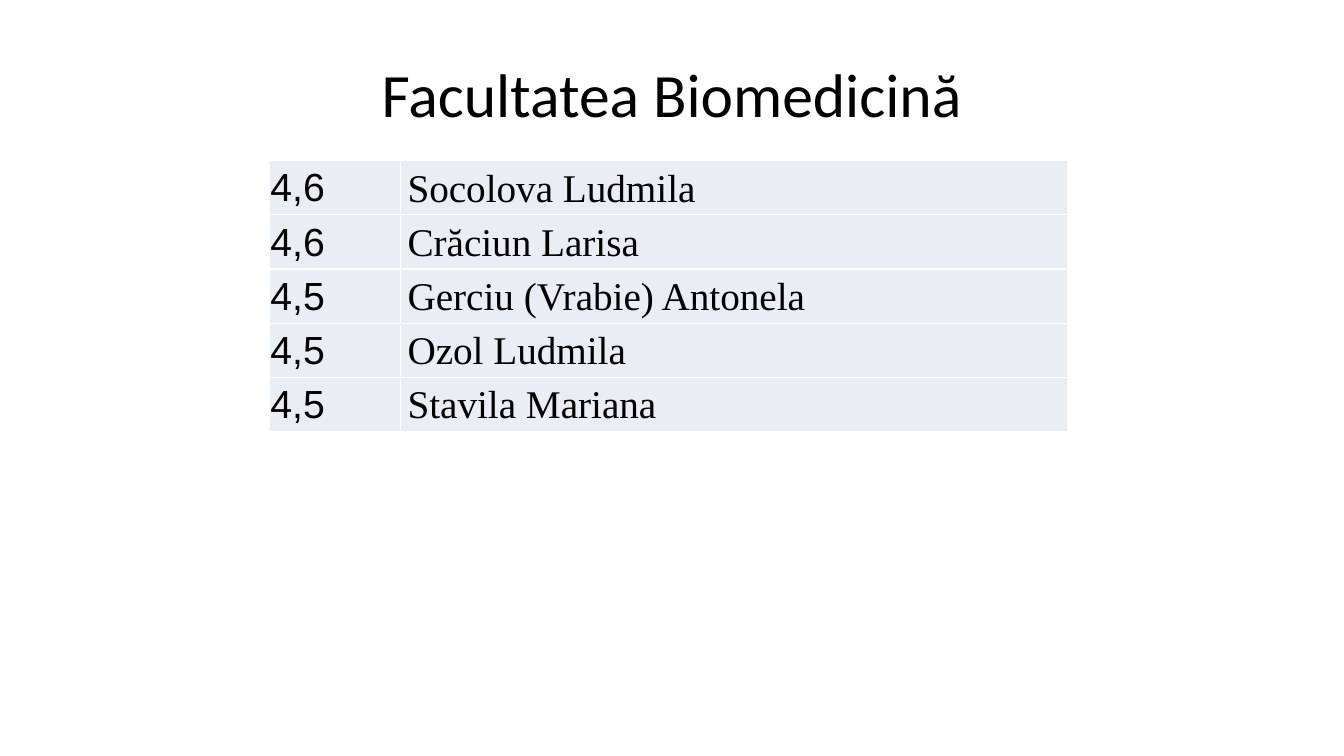
from dataclasses import dataclass
from typing import Any

from lxml import etree
from pptx import Presentation
from pptx.dml.color import RGBColor
from pptx.enum.text import MSO_ANCHOR, PP_ALIGN
from pptx.oxml.ns import qn
from pptx.util import Pt

TOP, MIDDLE = MSO_ANCHOR.TOP, MSO_ANCHOR.MIDDLE
LEFT, CENTER = PP_ALIGN.LEFT, PP_ALIGN.CENTER
BLACK, WHITE, ROW_FILL = "000000", "FFFFFF", "E9EDF4"
ROW_HEIGHT = 35.5


@dataclass
class Column:
    width: float
    font: str
    spacing: float
    cell_format: dict[str, Any]


COLUMNS = [
    Column(93.6, "Arial", 1.0, {
        "vertical_anchor": MIDDLE, "margin_left": Pt(0.7), "margin_top": Pt(0.7),
        "margin_right": Pt(0.7), "margin_bottom": Pt(0)}),
    Column(476.4, "Times New Roman", 1.15, {
        "vertical_anchor": TOP, "margin_left": Pt(5), "margin_top": Pt(0),
        "margin_right": Pt(5), "margin_bottom": Pt(0)}),
]
GRADES = [
    ("4,6", "Socolova Ludmila"),
    ("4,6", "Crăciun Larisa"),
    ("4,5", "Gerciu (Vrabie) Antonela"),
    ("4,5", "Ozol Ludmila"),
    ("4,5", "Stavila Mariana"),
]


def color(value: str) -> RGBColor:
    return RGBColor.from_string(value)


def set_format(target: Any, values: dict[str, Any]) -> None:
    for name, value in values.items():
        setattr(target, name, value)


def write(tf: Any, text: str, font: str, size: float, align: Any, spacing: float = 1.0) -> None:
    p = tf.paragraphs[0]
    set_format(p, {"alignment": align, "line_spacing": spacing})
    r = p.add_run()
    r.text = text
    set_format(r.font, {"name": font, "size": Pt(size)})
    r.font.color.rgb = color(BLACK)


def add_borders(cell: Any, line_color: str, width: float) -> None:
    tc_pr = cell._tc.get_or_add_tcPr()
    for i, side in enumerate(("lnL", "lnR", "lnT", "lnB")):
        ln = etree.Element(qn(f"a:{side}"), w=str(Pt(width)))
        fill = etree.SubElement(ln, qn("a:solidFill"))
        etree.SubElement(fill, qn("a:srgbClr"), val=line_color)
        tc_pr.insert(i, ln)


def add_title(s: Any, text: str) -> None:
    tf = s.shapes.add_textbox(Pt(48), Pt(21.6), Pt(864), Pt(90)).text_frame
    set_format(tf, {"word_wrap": True, "vertical_anchor": MIDDLE})
    write(tf, text, "Calibri", 44, CENTER)


def add_grades(s: Any) -> None:
    width = sum(column.width for column in COLUMNS)
    table = s.shapes.add_table(
        len(GRADES), len(COLUMNS), Pt(192.5), Pt(114.8),
        Pt(width), Pt(ROW_HEIGHT * len(GRADES))).table
    set_format(table, {"first_row": False, "horz_banding": False})
    for i, column in enumerate(COLUMNS):
        table.columns[i].width = Pt(column.width)
    for i, texts in enumerate(GRADES):
        table.rows[i].height = Pt(ROW_HEIGHT)
        for j, (column, text) in enumerate(zip(COLUMNS, texts)):
            cell = table.cell(i, j)
            set_format(cell, column.cell_format)
            cell.fill.solid()
            cell.fill.fore_color.rgb = color(ROW_FILL)
            add_borders(cell, WHITE, 1)
            write(cell.text_frame, text, column.font, 28, LEFT, column.spacing)


def main() -> None:
    prs = Presentation()
    set_format(prs, {"slide_width": Pt(960), "slide_height": Pt(540)})
    s = prs.slides.add_slide(prs.slide_layouts[6])
    # Background
    s.background.fill.solid()
    s.background.fill.fore_color.rgb = color(WHITE)
    # Title and table of grades
    add_title(s, "Facultatea Biomedicină")
    add_grades(s)
    prs.save("out.pptx")


if __name__ == "__main__":
    main()
